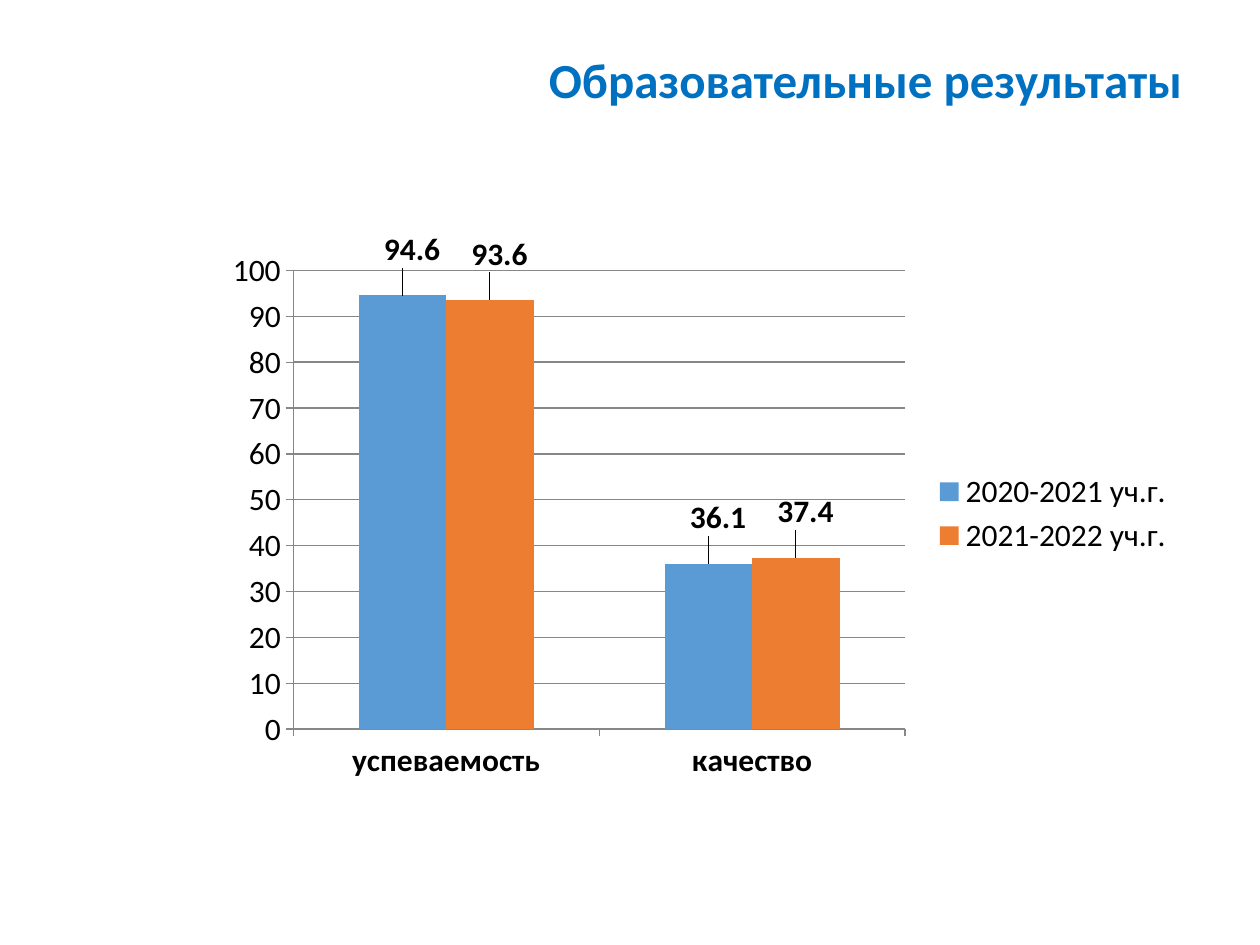
from dataclasses import dataclass

from lxml import etree
from pptx import Presentation
from pptx.chart.data import CategoryChartData
from pptx.dml.color import RGBColor
from pptx.enum.chart import (XL_CHART_TYPE, XL_LABEL_POSITION,
                             XL_LEGEND_POSITION, XL_TICK_MARK)
from pptx.enum.text import MSO_ANCHOR, MSO_AUTO_SIZE, PP_ALIGN
from pptx.util import Inches, Pt

COLUMNS = XL_CHART_TYPE.COLUMN_CLUSTERED
ABOVE = XL_LABEL_POSITION.OUTSIDE_END
RIGHT = XL_LEGEND_POSITION.RIGHT
TICK = XL_TICK_MARK.OUTSIDE
NS = "http://schemas.openxmlformats.org/drawingml/2006/chart"


@dataclass
class Theme:
    font: str = "Calibri"
    ink: str = "000000"
    title: str = "0070C0"
    grid: str = "878787"
    bars: tuple = ("5B9BD5", "ED7D31")
    head: int = 28
    body: int = 18


theme = Theme()


def style(font, size=theme.body, color=theme.ink, bold=False):
    font.name = theme.font
    font.size = Pt(size)
    font.bold = bold
    font.color.rgb = RGBColor.from_string(color)


def place(parent, index, **parts):
    """Insert a manual chart layout, in shares of the chart's size."""
    layout = etree.Element(f"{{{NS}}}layout")
    manual = etree.SubElement(layout, f"{{{NS}}}manualLayout")
    for name, value in parts.items():
        etree.SubElement(manual, f"{{{NS}}}{name}", val=str(value))
    for old in parent.findall(f"{{{NS}}}layout"):
        parent.remove(old)
    parent.insert(index, layout)


deck = Presentation()
deck.slide_width, deck.slide_height = Inches(10), Inches(7.5)
slide = deck.slides.add_slide(deck.slide_layouts[5])

# Title
title = slide.shapes.title
title.left, title.top = Inches(0.86), Inches(0.35)
title.width, title.height = Inches(8.62), Inches(0.61)
frame = title.text_frame
frame.word_wrap = True
frame.auto_size = MSO_AUTO_SIZE.NONE
frame.vertical_anchor = MSO_ANCHOR.MIDDLE
para = frame.paragraphs[0]
para.alignment = PP_ALIGN.RIGHT
para.line_spacing = 0.9
run = para.add_run()
run.text = "Образовательные результаты"
style(run.font, size=theme.head, color=theme.title, bold=True)

# Chart
data = CategoryChartData()
data.categories = ["успеваемость", "качество"]
data.add_series("2020-2021 уч.г.", [94.6, 36.1])
data.add_series("2021-2022 уч.г.", [93.6, 37.4])
chart = slide.shapes.add_chart(COLUMNS, Inches(1.71), Inches(1.83),
                               Inches(7.71), Inches(4.44), data).chart
style(chart.font)
chart.has_title = False
chart.has_legend = True
chart.legend.position = RIGHT
chart.legend.include_in_layout = False
style(chart.legend.font)

# Axes
scale = chart.value_axis
scale.minimum_scale, scale.maximum_scale, scale.major_unit = 0, 100, 10
scale.has_major_gridlines = True
for axis in (chart.category_axis, scale):
    axis.major_tick_mark = TICK
    style(axis.tick_labels.font, bold=axis is not scale)
for line in (chart.category_axis.format.line, scale.format.line,
             scale.major_gridlines.format.line):
    line.color.rgb = RGBColor.from_string(theme.grid)
    line.width = Pt(0.75)

# Bars and their values
plot = chart.plots[0]
plot.gap_width, plot.overlap = 150, 0
plot.vary_by_categories = False
for series, color in zip(plot.series, theme.bars):
    series.format.fill.solid()
    series.format.fill.fore_color.rgb = RGBColor.from_string(color)
    labels = series.data_labels
    labels.show_value = True
    labels.position = ABOVE
    style(labels.font, bold=True)
    for i in range(len(series.values)):
        label = series.points[i].data_label
        label.position = ABOVE
        style(label.font, bold=True)
    for node in series.data_labels._element.findall(f"{{{NS}}}dLbl"):
        place(node, 1, x=0.01, y=-0.04)

area = chart._chartSpace.find(f".//{{{NS}}}plotArea")
place(area, 0, layoutTarget="inner", xMode="edge", yMode="edge",
      x=0.08, y=0.06, w=0.63, h=0.83)

deck.save("out.pptx")
